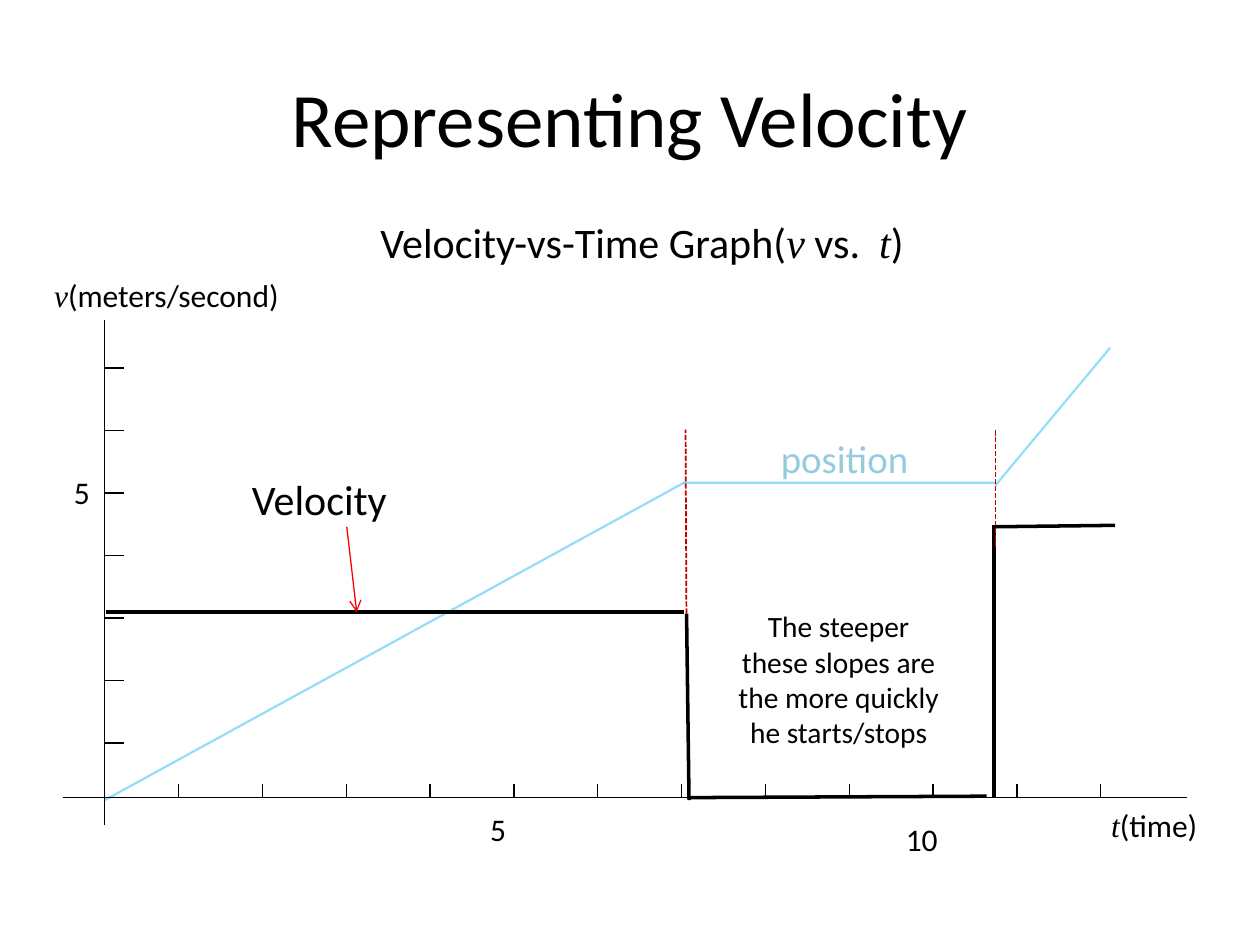
from lxml import etree
from pptx import Presentation
from pptx.dml.color import RGBColor
from pptx.enum.dml import MSO_LINE
from pptx.enum.shapes import MSO_CONNECTOR
from pptx.enum.text import MSO_ANCHOR, PP_ALIGN
from pptx.oxml.ns import qn
from pptx.util import Cm, Pt

STRAIGHT = MSO_CONNECTOR.STRAIGHT
DASH = MSO_LINE.SQUARE_DOT
MIDDLE = MSO_ANCHOR.MIDDLE
LEFT, CENTER = PP_ALIGN.LEFT, PP_ALIGN.CENTER
SANS, SERIF = "Calibri", "Times New Roman"
COLORS = {"ink": "000000", "path": "00B0F0", "mark": "C00000",
          "arrow": "FF0000", "label": "93CDDD"}

deck = Presentation()
deck.slide_width, deck.slide_height = Cm(25.4), Cm(19.05)
slide = deck.slides.add_slide(deck.slide_layouts[5])


def draw(ends, color="ink", width=0.75):
    line = slide.shapes.add_connector(STRAIGHT, *[Cm(v) for v in ends])
    line.line.color.rgb = RGBColor.from_string(COLORS[color])
    line.line.width = Pt(width)
    etree.SubElement(line._element.spPr, qn("a:effectLst"))
    return line


def write(shape, box, runs, size, color="ink", align=LEFT, wrap=True):
    shape.left, shape.top, shape.width, shape.height = [Cm(v) for v in box]
    frame = shape.text_frame
    frame.word_wrap = wrap
    para = frame.paragraphs[0]
    para.alignment = align
    for text, face in runs:
        run = para.add_run()
        run.text = text
        run.font.name = face
        run.font.size = Pt(size)
        run.font.italic = face == SERIF
        run.font.color.rgb = RGBColor.from_string(COLORS[color])


title = slide.shapes.title
write(title, (1.27, 0.76, 22.86, 3.18), [("Representing Velocity", SANS)], 44,
      align=CENTER)
title.text_frame.vertical_anchor = MIDDLE

draw((13.84, 12.93, 13.82, 8.66), "mark", 1).line.dash_style = DASH

for ends in [(22.38, 7.01, 20.07, 9.78), (2.11, 16.13, 13.79, 9.73),
             (20.07, 9.73, 13.77, 9.73)]:
    line = draw(ends, "path", 1.25)
    tint = line._element.spPr.find(".//" + qn("a:srgbClr"))
    etree.SubElement(tint, qn("a:alpha")).set("val", "42000")

draw((2.11, 6.45, 2.11, 16.64))
draw((23.93, 16.08, 1.27, 16.08))
for i in range(7):
    y = 7.42 + 1.26 * i
    draw((2.49, y, 2.11, y))
for i in range(12):
    x = 3.6 + 1.69 * i
    draw((x, 15.8, x, 16.08))

for ends in [(19.89, 16.05, 13.89, 16.08), (2.13, 12.34, 13.79, 12.34),
             (13.89, 16.13, 13.84, 12.37), (20.04, 16.08, 20.04, 10.59),
             (22.48, 10.59, 20.04, 10.62)]:
    draw(ends, width=2)

draw((20.07, 11.02, 20.07, 8.66), "mark", 1).line.dash_style = DASH

arrow = draw((6.99, 10.62, 7.19, 12.34), "arrow")
etree.SubElement(arrow.line._get_or_add_ln(), qn("a:tailEnd")).set("type", "arrow")

units = [
    ((22.15, 16.13, 2.31, 1.02), [("t", SERIF), ("(time)", SANS)]),
    ((9.63, 16.21, 0.84, 1.02), [("5", SANS)]),
    ((18.01, 16.41, 1.17, 1.02), [("10", SANS)]),
    ((0.84, 5.44, 5.11, 1.02), [("v", SERIF), ("(meters/second)", SANS)]),
    ((1.24, 9.42, 0.84, 1.02), [("5", SANS)]),
]
for box, runs in units:
    write(slide.shapes.add_textbox(0, 0, 0, 0), box, runs, 18, wrap=False)

head = [("Velocity-vs-Time Graph(", SANS), ("v", SERIF), (" vs.  ", SANS),
        ("t", SERIF), (")", SANS)]
note = "The steeper these slopes are the more quickly he starts/stops"
notes = [
    ((7.42, 4.24, 16.51, 1.7), head, 24, "ink", LEFT),
    ((4.83, 9.42, 3.28, 1.7), [("Velocity", SANS)], 24, "ink", LEFT),
    ((14.58, 12.14, 4.65, 3.33), [(note, SANS)], 16.8, "ink", CENTER),
    ((15.49, 8.64, 3.28, 1.7), [("position", SANS)], 22.2, "label", LEFT),
]
for box, runs, size, color, align in notes:
    write(slide.shapes.add_textbox(0, 0, 0, 0), box, runs, size, color, align)

deck.save("out.pptx")
